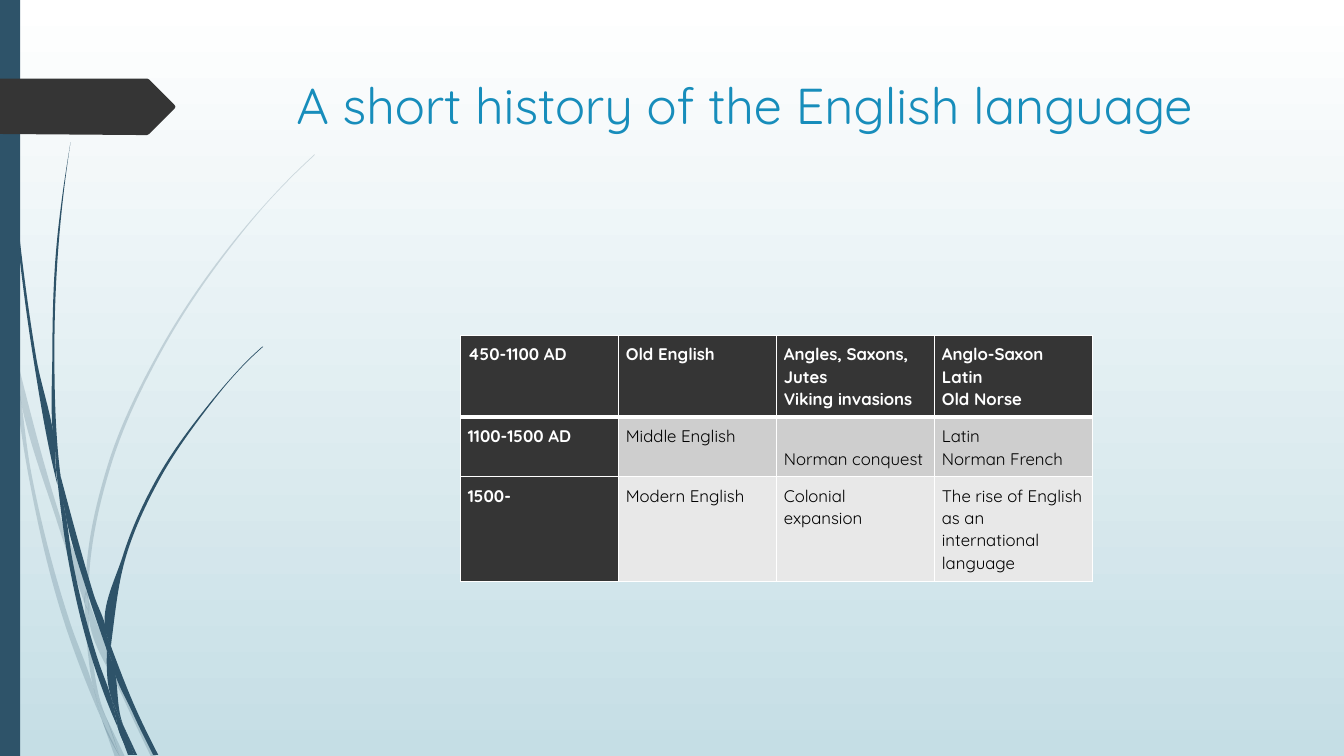
import math
import pptx
import pptx.dml.color
import pptx.enum.shapes
import pptx.enum.text
import pptx.oxml
import pptx.oxml.ns
import pptx.util
from dataclasses import dataclass

TITLE = "A short history of the English language"

# One row per period; each cell is a list of paragraphs.
PERIODS = [
    [["450-1100 AD"], ["Old English"], ["Angles, Saxons, Jutes", "Viking invasions"],
     ["Anglo-Saxon", "Latin", "Old Norse"]],
    [["1100-1500 AD"], ["Middle English"], ["Norman conquest"], ["Latin", "Norman French"]],
    [["1500-"], ["Modern English"], ["Colonial expansion"],
     ["The rise of English as an international language"]],
]
ROW_HEIGHTS = [0.81, 0.59, 1.04]
TABLE_WIDTH = 6.27
BOTTOM_CELLS = {(1, 2)}

# Grass blades: the points (x, y) in inches that each curved outline passes through.
PALE_BLADES = [
    [(0.11, 3.5), (0.09, 3.22), (0, 2.82), (0, 2.99), (0.1, 3.44)],
    [(0.58, 5.22), (0.84, 5.99), (0.85, 5.86), (0.62, 5.2), (0.14, 3.45), (0.17, 3.76)],
    [(0.92, 6.07), (0.88, 5.96), (0.88, 6.1), (1.23, 6.94), (1.5, 7.51), (1.55, 7.51),
     (1.27, 6.92)],
    [(1.19, 7.51), (1.24, 7.51), (1.05, 7.11)],
    [(0.93, 6.83), (0.7, 6.19), (0.31, 4.69), (0.17, 3.76), (0.11, 3.5), (0.28, 4.7),
     (0.65, 6.21), (0.92, 6.93), (1.01, 7.14), (0.99, 7.07)],
    [(0.84, 5.99), (0.87, 6.46), (0.93, 6.83), (0.96, 6.92), (1.05, 7.11), (1.03, 7.06),
     (0.91, 6.46), (0.88, 6.1), (0.88, 6.08)],
    [(0.88, 5.84), (1.1, 4.62), (1.6, 3.49), (2.29, 2.45), (2.68, 1.98), (2.9, 1.75),
     (3.12, 1.54), (3.12, 1.53), (2.89, 1.75), (2.68, 1.97), (2.28, 2.44), (1.58, 3.48),
     (1.07, 4.61), (0.85, 5.84), (0.85, 5.86), (0.88, 5.96)],
    [(1.01, 7.14), (1.14, 7.51), (1.19, 7.51)],
    [(0.88, 6.08), (0.88, 6.1), (0.88, 5.96), (0.85, 5.86), (0.84, 5.99)],
    [(0.96, 6.92), (0.93, 6.83), (0.99, 7.07), (1.01, 7.14), (1.19, 7.51), (1.05, 7.11)],
]
DARK_BLADES = [
    [(0.07, 1.1), (0.17, 2.33), (0.33, 3.55), (0.56, 4.77), (0.57, 4.81), (0.55, 4.57),
     (0.55, 4.53), (0.36, 3.55), (0.19, 2.32), (0.08, 1.09), (0.05, 0.48), (0.04, 0),
     (0.03, 0), (0.04, 0.48)],
    [(0.88, 5.92), (1.06, 6.45), (1.06, 6.33), (1.06, 6.31), (0.93, 5.9), (0.6, 4.72),
     (0.64, 5.05)],
    [(1.13, 6.49), (1.1, 6.41), (1.11, 6.56), (1.32, 7.08), (1.52, 7.49), (1.57, 7.49),
     (1.36, 7.06)],
    [(1.1, 6.91), (0.98, 6.57), (0.72, 5.56), (0.64, 5.05), (0.57, 4.77), (0.68, 5.57),
     (0.93, 6.59), (1.11, 7.08), (1.17, 7.22), (1.16, 7.17)],
    [(0.6, 4.72), (0.58, 4.53), (0.54, 3.49), (0.58, 2.45), (0.63, 1.93), (0.7, 1.41),
     (0.62, 1.93), (0.56, 2.45), (0.52, 3.49), (0.55, 4.49)],
    [(1.33, 7.49), (1.36, 7.49), (1.22, 7.19)],
    [(0.57, 4.77), (0.64, 5.05), (0.6, 4.72), (0.55, 4.49), (0.55, 4.53)],
    [(1.11, 6.33), (1.25, 5.52), (1.58, 4.76), (2.05, 4.06), (2.31, 3.74), (2.45, 3.59),
     (2.61, 3.44), (2.6, 3.44), (2.45, 3.58), (2.31, 3.73), (2.04, 4.05), (1.56, 4.74),
     (1.22, 5.51), (1.06, 6.31), (1.1, 6.41)],
    [(1.17, 7.22), (1.27, 7.49), (1.31, 7.49)],
    [(1.06, 6.45), (1.1, 6.91), (1.16, 7.06), (1.22, 7.19), (1.21, 7.16), (1.11, 6.56),
     (1.09, 6.51)],
    [(1.06, 6.45), (1.09, 6.51), (1.11, 6.56), (1.1, 6.41), (1.06, 6.31), (1.06, 6.33)],
    [(1.16, 7.06), (1.1, 6.91), (1.16, 7.17), (1.17, 7.22), (1.3, 7.49), (1.33, 7.49),
     (1.22, 7.19)],
]
ARROW_TAG = [(0, 0.78), (1.46, 0.78), (1.48, 0.79), (1.73, 1.04), (1.74, 1.06),
             (1.73, 1.08), (1.48, 1.33), (1.46, 1.34), (1.36, 1.34), (0, 1.33)]


@dataclass(frozen=True)
class Theme:
    font: str = "Quicksand"
    title_size: int = 36
    cell_size: int = 12
    title: str = "178DBB"
    stem: str = "2E5369"
    dark: str = "353535"
    white: str = "FFFFFF"
    black: str = "000000"
    sky: str = "C5DEE5"
    bands: tuple = ("353535", "CECECE", "E8E8E8")
    pale_alpha: int = 20


THEME = Theme()


def inch(value):
    return pptx.util.Cm(2.54 * value)


def rgb(value):
    return pptx.dml.color.RGBColor.from_string(value)


def paint(sp, color, alpha=100):
    sp.shadow.inherit = False
    sp.fill.solid()
    sp.fill.fore_color.rgb = rgb(color)
    sp.line.fill.background()
    if alpha < 100:
        clr = sp._element.xpath("./p:spPr/a:solidFill/a:srgbClr")[0]
        tag = pptx.oxml.ns.qn("a:alpha")
        clr.append(clr.makeelement(tag, {"val": str(alpha * 1000)}))


def add_outline(shapes, points):
    points = [(inch(x), inch(y)) for x, y in points]
    builder = shapes.build_freeform(*points[0])
    builder.add_line_segments(points[1:], close=True)
    return builder.convert_to_shape()


def mix(a, u, b, v):
    return (a * u[0] + b * v[0], a * u[1] + b * v[1])


def bezier_points(knots):
    """Closed outline with two handles after each knot; sharp turns stay corners."""
    n = len(knots)
    chords = [mix(1, knots[(i + 1) % n], -1, knots[i]) for i in range(n)]
    sizes = [math.hypot(*c) for c in chords]
    units = [mix(1 / h, c, 0, c) for c, h in zip(chords, sizes)]
    tangents = []
    for i in range(n):
        u, v, h, k = units[i - 1], units[i], sizes[i - 1], sizes[i]
        smooth = u[0] * v[0] + u[1] * v[1] > 0.8
        tangents.append(mix(k / (h + k), u, h / (h + k), v) if smooth else None)
    points = [knots[0]]
    for i in range(n):
        start, end, unit = tangents[i], tangents[(i + 1) % n], units[i]
        out = start or mix(1.5, unit, -0.5, end or unit)
        into = end or mix(1.5, unit, -0.5, start or unit)
        target = knots[(i + 1) % n]
        points += [mix(1, knots[i], sizes[i] / 3, out),
                   mix(1, target, -sizes[i] / 3, into), target]
    return points


def add_blade(shapes, knots, alpha):
    sp = add_outline(shapes, bezier_points(knots))
    lines = sp._element.xpath(".//a:lnTo")
    for i in range(0, len(lines) - 2, 3):
        curve = lines[i].makeelement(pptx.oxml.ns.qn("a:cubicBezTo"), {})
        lines[i].addprevious(curve)
        for line in lines[i:i + 3]:
            curve.append(line[0])
            line.getparent().remove(line)
    paint(sp, THEME.stem, alpha)


def add_run(p, text, size, color, bold=False):
    r = p.add_run()
    r.text = text
    r.font.name = THEME.font
    r.font.size = pptx.util.Pt(size)
    r.font.bold = bold
    r.font.color.rgb = rgb(color)


def add_borders(cell, bottom):
    tc_pr = cell._tc.get_or_add_tcPr()
    for side, width in (("L", 1), ("R", 1), ("T", 1), ("B", bottom)):
        tc_pr.append(pptx.oxml.parse_xml(
            f'<a:ln{side} {pptx.oxml.ns.nsdecls("a")} w="{pptx.util.Pt(width)}">'
            f'<a:solidFill><a:srgbClr val="{THEME.white}"/></a:solidFill></a:ln{side}>'))


def fill_cell(cell, row, col, lines):
    header = row == 0 or col == 0
    add_borders(cell, 3 if row == 0 else 1)
    cell.fill.solid()
    cell.fill.fore_color.rgb = rgb(THEME.dark if header else THEME.bands[row])
    cell.margin_left = cell.margin_right = cell.margin_top = cell.margin_bottom = inch(0.07)
    if (row, col) in BOTTOM_CELLS:
        cell.vertical_anchor = pptx.enum.text.MSO_ANCHOR.BOTTOM
    for i, line in enumerate(lines):
        p = cell.text_frame.add_paragraph() if i else cell.text_frame.paragraphs[0]
        p.line_spacing = 1.07
        add_run(p, line, THEME.cell_size, THEME.white if header else THEME.black, header)


def add_periods(s):
    table = s.shapes.add_table(len(PERIODS), len(PERIODS[0]), inch(4.57), inch(3.33),
                               inch(TABLE_WIDTH), inch(sum(ROW_HEIGHTS))).table
    table.first_row = table.horz_banding = False
    for row, cells in enumerate(PERIODS):
        table.rows[row].height = inch(ROW_HEIGHTS[row])
        for col, lines in enumerate(cells):
            fill_cell(table.cell(row, col), row, col, lines)


def main():
    prs = pptx.Presentation()
    prs.slide_width, prs.slide_height = inch(13.33), inch(7.5)
    s = prs.slides.add_slide(prs.slide_layouts[6])
    sky = s.background.fill
    sky.gradient()
    sky.gradient_angle = 270
    for stop, color in zip(sky.gradient_stops, (THEME.white, THEME.sky)):
        stop.color.rgb = rgb(color)
    for blades, alpha in ((PALE_BLADES, THEME.pale_alpha), (DARK_BLADES, 100)):
        grass = s.shapes.add_group_shape()
        for knots in blades:
            add_blade(grass.shapes, knots, alpha)
    side_bar = s.shapes.add_shape(pptx.enum.shapes.MSO_SHAPE.RECTANGLE,
                                  0, 0, inch(0.2), prs.slide_height)
    paint(side_bar, THEME.stem)
    paint(add_outline(s.shapes, ARROW_TAG), THEME.dark)
    tf = s.shapes.add_textbox(inch(2.84), inch(0.69), inch(9.75), inch(1.4)).text_frame
    tf.word_wrap = True
    add_run(tf.paragraphs[0], TITLE, THEME.title_size, THEME.title)
    add_periods(s)
    prs.save("out.pptx")


if __name__ == "__main__":
    main()
